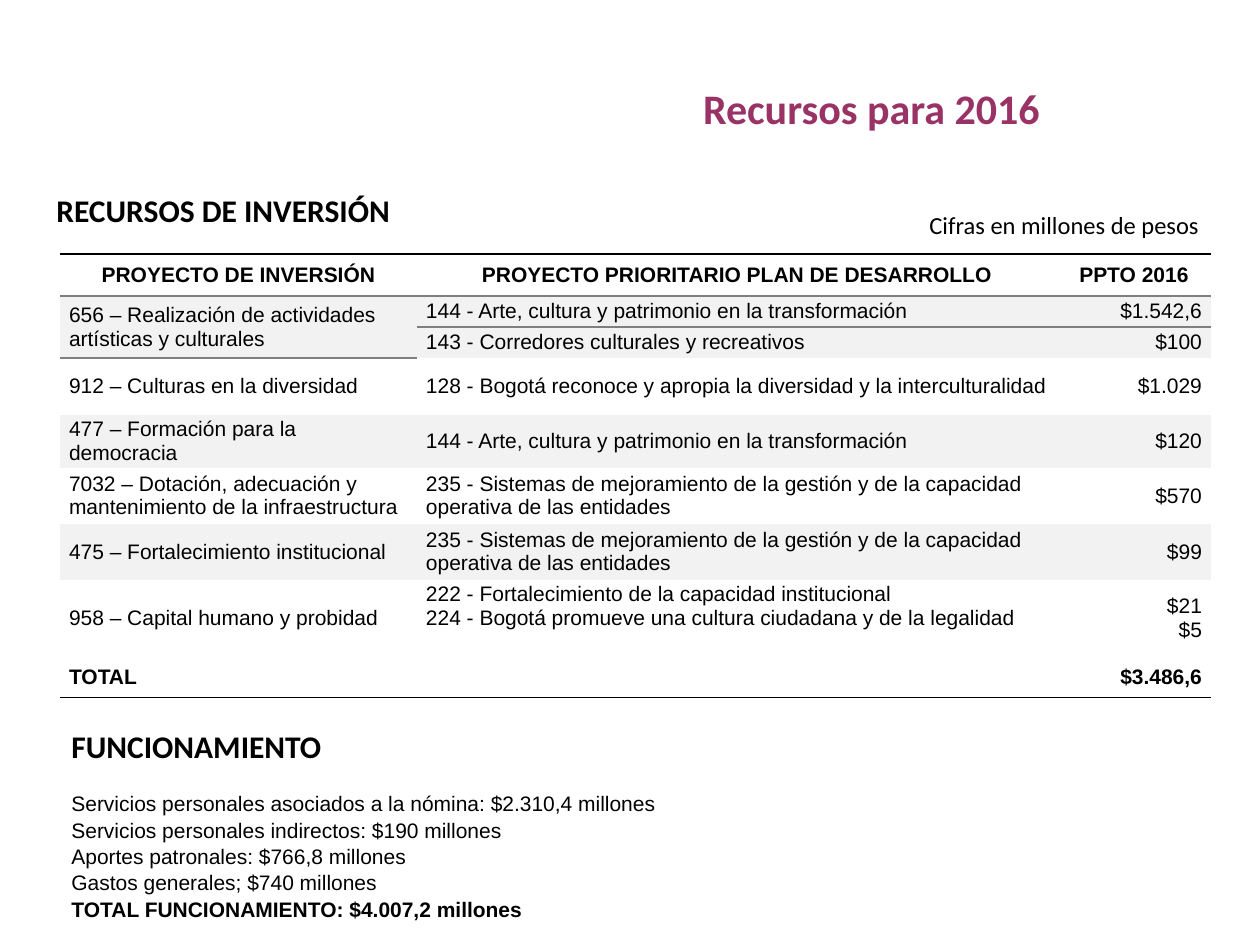
from lxml.etree import SubElement
from pptx import Presentation
from pptx.dml.color import RGBColor
from pptx.enum.text import MSO_ANCHOR, MSO_AUTO_SIZE, PP_ALIGN
from pptx.oxml import parse_xml
from pptx.oxml.ns import qn
from pptx.util import Pt

PX = 914400 // 126
BLACK = RGBColor(0x00, 0x00, 0x00)
WHITE = RGBColor(0xFF, 0xFF, 0xFF)
BAND = RGBColor(0xF2, 0xF2, 0xF2)
GREY = RGBColor(0x7F, 0x7F, 0x7F)
PLUM = RGBColor(0x99, 0x33, 0x66)

PLAIN_STYLE = "{2D5ABB26-0587-4C30-8999-92F81FD0307C}"
BODY = {"name": "Arial", "size": Pt(12), "bold": False}
STRONG = {**BODY, "bold": True}
HEADING = {"name": "Calibri", "size": Pt(18), "bold": True}
UNITS = {"name": "Calibri", "size": Pt(14), "bold": False}
TITLE = {"name": "Calibri", "size": Pt(24), "bold": True}

COLUMN_WIDTHS = [357, 640, 154]
ROW_HEIGHTS = [42, 31, 31, 57, 53, 56, 56, 77, 41]
BANDED_ROWS = {1, 2, 4, 6}
BUDGET = [
    ("PROYECTO DE INVERSIÓN", "PROYECTO PRIORITARIO PLAN DE DESARROLLO", "PPTO 2016"),
    ("656 – Realización de actividades artísticas y culturales",
     "144 - Arte, cultura y patrimonio en la transformación", "$1.542,6"),
    ("", "143 - Corredores culturales y recreativos", "$100"),
    ("912 – Culturas en la diversidad",
     "128 - Bogotá reconoce y apropia la diversidad y la interculturalidad", "$1.029"),
    ("477 – Formación para la democracia",
     "144 - Arte, cultura y patrimonio en la transformación", "$120"),
    ("7032 – Dotación, adecuación y mantenimiento de la infraestructura",
     "235 - Sistemas de mejoramiento de la gestión y de la capacidad operativa de las entidades",
     "$570"),
    ("475 – Fortalecimiento institucional",
     "235 - Sistemas de mejoramiento de la gestión y de la capacidad operativa de las entidades",
     "$99"),
    ("958 – Capital humano y probidad",
     "222 - Fortalecimiento de la capacidad institucional\n"
     "224 - Bogotá promueve una cultura ciudadana y de la legalidad", "$21\n$5"),
    ("TOTAL", "", "$3.486,6"),
]
EXPENSES = [
    "Servicios personales asociados a la nómina: $2.310,4 millones",
    "Servicios personales indirectos: $190 millones",
    "Aportes patronales: $766,8 millones",
    "Gastos generales; $740 millones",
]
EXPENSES_TOTAL = "TOTAL FUNCIONAMIENTO: $4.007,2 millones"


def scaled(box):
    return [value * PX for value in box]


def format_font(font, values, color=BLACK):
    for key, value in values.items():
        setattr(font, key, value)
    font.color.rgb = color


def add_title(page, box):
    title = page.shapes.title
    title.left, title.top, title.width, title.height = scaled(box)
    frame = title.text_frame
    frame.vertical_anchor = MSO_ANCHOR.TOP
    frame.auto_size = MSO_AUTO_SIZE.NONE
    frame.text = "Recursos para 2016"
    para = frame.paragraphs[0]
    para.alignment = PP_ALIGN.CENTER
    format_font(para.runs[0].font, TITLE, PLUM)


def add_text(page, box, lines, wrap=False):
    frame = page.shapes.add_textbox(*scaled(box)).text_frame
    frame.word_wrap = wrap
    frame.auto_size = MSO_AUTO_SIZE.SHAPE_TO_FIT_TEXT
    frame.text = "\n".join(text for text, values in lines)
    for para, (text, values) in zip(frame.paragraphs, lines):
        format_font(para.runs[0].font, values)
    return frame


def add_border(cell, side, color):
    line = parse_xml(
        f'<a:{side} xmlns:a="http://schemas.openxmlformats.org/drawingml/2006/main" '
        f'w="{Pt(1)}"><a:solidFill/></a:{side}>'
    )
    SubElement(line[0], qn("a:srgbClr"), val=str(color))
    cell._tc.get_or_add_tcPr().insert(0, line)


def fill_cell(cell, text, row, column):
    last = len(BUDGET) - 1
    cell.margin_left = cell.margin_right = 9 * PX
    cell.margin_top = cell.margin_bottom = 0
    cell.vertical_anchor = MSO_ANCHOR.MIDDLE
    cell.fill.solid()
    cell.fill.fore_color.rgb = BAND if row in BANDED_ROWS else WHITE
    cell.text = text
    for para in cell.text_frame.paragraphs:
        if row == 0:
            para.alignment = PP_ALIGN.CENTER
        elif column == 2:
            para.alignment = PP_ALIGN.RIGHT
        format_font(para.font, STRONG if row in (0, last) else BODY)
        for span in para.runs:
            format_font(span.font, STRONG if row in (0, last) else BODY)
    if row in (0, last):
        add_border(cell, "lnB", GREY if row == 0 else BLACK)
    if row in (0, 1):
        add_border(cell, "lnT", BLACK if row == 0 else GREY)


def add_budget_table(page, left, top):
    box = (left, top, sum(COLUMN_WIDTHS), sum(ROW_HEIGHTS))
    table = page.shapes.add_table(len(BUDGET), len(COLUMN_WIDTHS), *scaled(box)).table
    table.first_row = table.horz_banding = False
    table._tbl.tblPr.find(qn("a:tableStyleId")).text = PLAIN_STYLE
    for column, width in zip(table.columns, COLUMN_WIDTHS):
        column.width = width * PX
    for row, height in zip(table.rows, ROW_HEIGHTS):
        row.height = height * PX
    for row, texts in enumerate(BUDGET):
        for column, text in enumerate(texts):
            fill_cell(table.cell(row, column), text, row, column)
    table.cell(7, 1).margin_bottom = 24 * PX
    table.cell(1, 0).merge(table.cell(2, 0))
    table.cell(8, 0).merge(table.cell(8, 1))


def add_operating_costs(page, box):
    lines = [("FUNCIONAMIENTO", HEADING)]
    lines += [(text, BODY) for text in EXPENSES]
    lines.append((EXPENSES_TOTAL, STRONG))
    frame = add_text(page, box, lines, wrap=True)
    for para in frame.paragraphs[1:]:
        para.line_spacing = 1.05
    frame.paragraphs[1].space_before = Pt(14)


def main():
    deck = Presentation()
    deck.slide_width, deck.slide_height = scaled((1260, 945))
    page = deck.slides.add_slide(deck.slide_layouts[5])
    add_title(page, (532, 76, 679, 63))
    add_budget_table(page, 60, 254)
    add_text(page, (917, 204, 297, 43), [("Cifras en millones de pesos", UNITS)])
    add_operating_costs(page, (59, 721, 799, 204))
    add_text(page, (44, 185, 362, 50), [("RECURSOS DE INVERSIÓN", HEADING)])
    deck.save("out.pptx")


if __name__ == "__main__":
    main()
